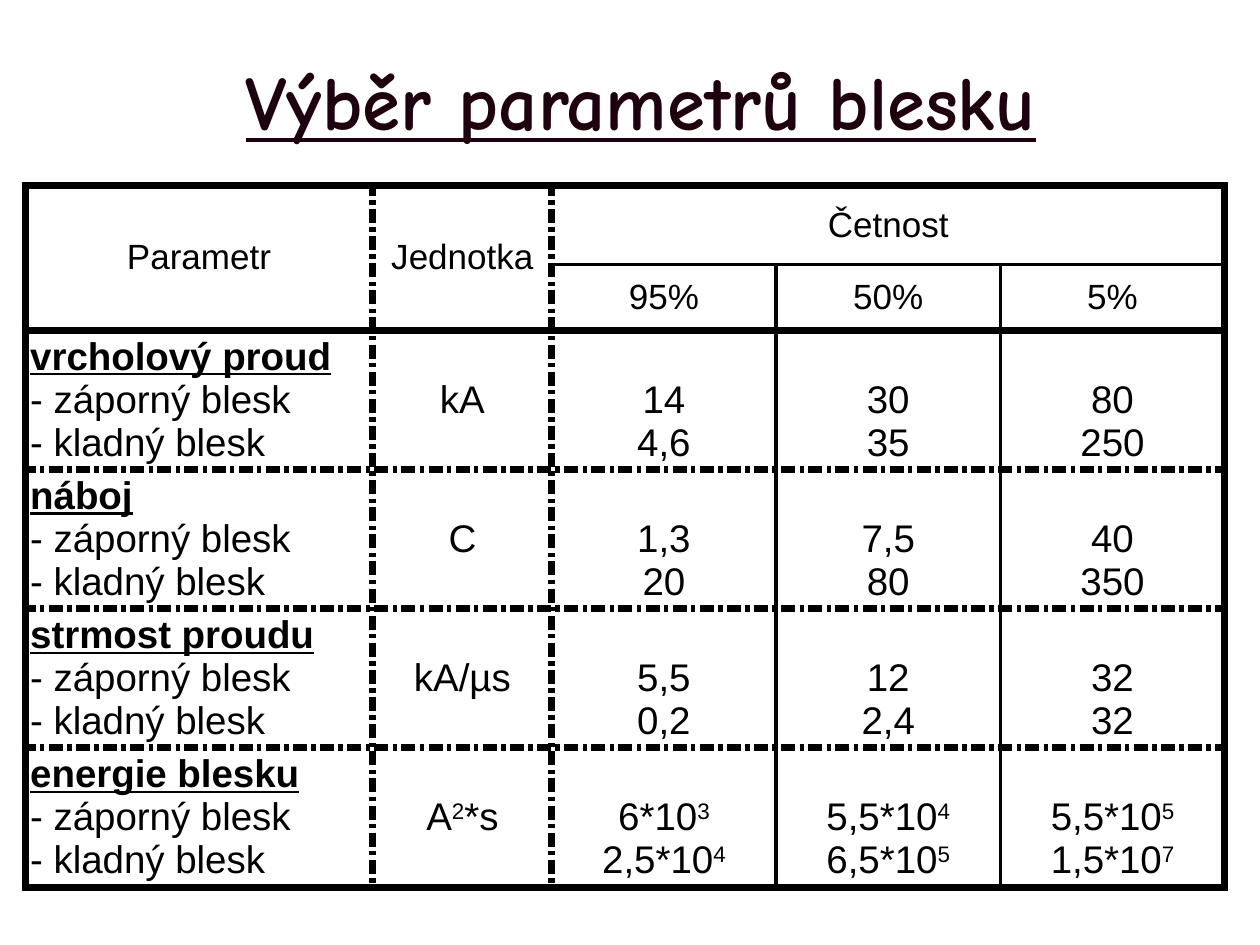
from lxml import etree
from pptx import Presentation
from pptx.dml.color import RGBColor
from pptx.enum import text as t
from pptx.oxml import ns
from pptx.util import Inches, Pt

BLACK = RGBColor(0, 0, 0)
WHITE = RGBColor(255, 255, 255)
PLUM = RGBColor(0x1E, 0, 0x0F)
LEFT, MID = t.PP_ALIGN.LEFT, t.PP_ALIGN.CENTER
CENTER, LOW = t.MSO_ANCHOR.MIDDLE, t.MSO_ANCHOR.BOTTOM

TITLE = "Výběr parametrů blesku"
HEADS = [["Parametr", "Jednotka", "Četnost", "", ""],
         ["", "", "95%", "50%", "5%"]]
KINDS = ["- záporný blesk", "- kladný blesk"]
DATA = [
    ("vrcholový proud", "kA", ["14", "4,6"], ["30", "35"], ["80", "250"]),
    ("náboj", "C", ["1,3", "20"], ["7,5", "80"], ["40", "350"]),
    ("strmost proudu", "kA/µs", ["5,5", "0,2"], ["12", "2,4"], ["32", "32"]),
    ("energie blesku", "A^2*s", ["6*10^3", "2,5*10^4"],
     ["5,5*10^4", "6,5*10^5"], ["5,5*10^5", "1,5*10^7"]),
]
COLS = [2.76, 1.42, 1.78, 1.78, 1.78]
ROWS = [0.63, 0.52, 0.68, 0.73, 0.7, 0.67]
MERGES = [((0, 0), (1, 0)), ((0, 1), (1, 1)), ((0, 2), (0, 4))]

SOLID, THIN, DASH = (4.5, "solid"), (2.25, "solid"), (4.5, "sysDashDot")
VERT = [SOLID, DASH, DASH, THIN, THIN, SOLID]
HORIZ = [SOLID, THIN, SOLID, DASH, DASH, DASH, SOLID]


def write(frame, lines, size=22, font="Arial", color=BLACK, align=MID,
          anchor=CENTER, strong=False):
    frame.word_wrap = True
    frame.vertical_anchor = anchor
    for i, line in enumerate(lines):
        para = frame.paragraphs[0] if i == 0 else frame.add_paragraph()
        para.alignment = align
        base, *powers = line.split("^")
        parts = [(base, False)]
        for part in powers:
            parts += [(part[:1], True), (part[1:], False)]
        for words, raised in parts:
            if not words:
                continue
            run = para.add_run()
            run.text = words
            run.font.size = Pt(size)
            run.font.name = font
            run.font.color.rgb = color
            run.font.bold = run.font.underline = strong and i == 0
            if raised:
                run.font._element.set("baseline", "30000")


def edge(cell, side, style):
    width, dash = style
    line = etree.SubElement(cell._tc.get_or_add_tcPr(), ns.qn("a:ln" + side),
                            w=str(Pt(width)))
    fill = etree.SubElement(line, ns.qn("a:solidFill"))
    etree.SubElement(fill, ns.qn("a:srgbClr"), val=str(BLACK))
    etree.SubElement(line, ns.qn("a:prstDash"), val=dash)


def border(cell, row, col):
    right, low = col + cell.span_width, row + cell.span_height
    for side, place in (("L", col), ("R", right)):
        if row > 0 or place not in (3, 4):
            edge(cell, side, VERT[place])
    for side, place in (("T", row), ("B", low)):
        if col > 1 or place != 1:
            edge(cell, side, HORIZ[place])


def style(cell, row, col):
    cell.margin_left = cell.margin_right = Inches(0.04)
    cell.margin_top = cell.margin_bottom = Inches(0.04)
    border(cell, row, col)
    cell.fill.solid()
    cell.fill.fore_color.rgb = WHITE


def fill(cell, row, col):
    if row < 2:
        form = dict(lines=[HEADS[row][col]], size=20)
    elif col == 0:
        form = dict(lines=[DATA[row - 2][0]] + KINDS, align=LEFT, strong=True,
                    anchor=LOW if row == 2 else CENTER)
    elif col == 1:
        form = dict(lines=[DATA[row - 2][1]])
    else:
        form = dict(lines=DATA[row - 2][col], anchor=LOW)
    anchor = form.pop("anchor", CENTER)
    write(cell.text_frame, **form)
    cell.vertical_anchor = anchor


def main():
    deck = Presentation()
    deck.slide_width, deck.slide_height = Inches(10), Inches(7.5)
    slide = deck.slides.add_slide(deck.slide_layouts[5])

    title = slide.shapes.title
    title.left, title.top = Inches(0.5), Inches(0.27)
    title.width, title.height = Inches(9.17), Inches(1.04)
    write(title.text_frame, [TITLE], size=44, font="Comic Neue", color=PLUM,
          strong=True)

    frame = slide.shapes.add_table(len(ROWS), len(COLS), Inches(0.2),
                                   Inches(1.47), Inches(9.53), Inches(5.87))
    table = frame.table
    table.first_row = table.horz_banding = False
    for col, width in zip(table.columns, COLS):
        col.width = Inches(width)
    for row, height in zip(table.rows, ROWS):
        row.height = Inches(height)
    frame.height = Inches(5.87)
    for start, end in MERGES:
        table.cell(*start).merge(table.cell(*end))
    for row in range(len(ROWS)):
        for col in range(len(COLS)):
            cell = table.cell(row, col)
            style(cell, row, col)
            if not cell.is_spanned:
                fill(cell, row, col)

    deck.save("out.pptx")


if __name__ == "__main__":
    main()
